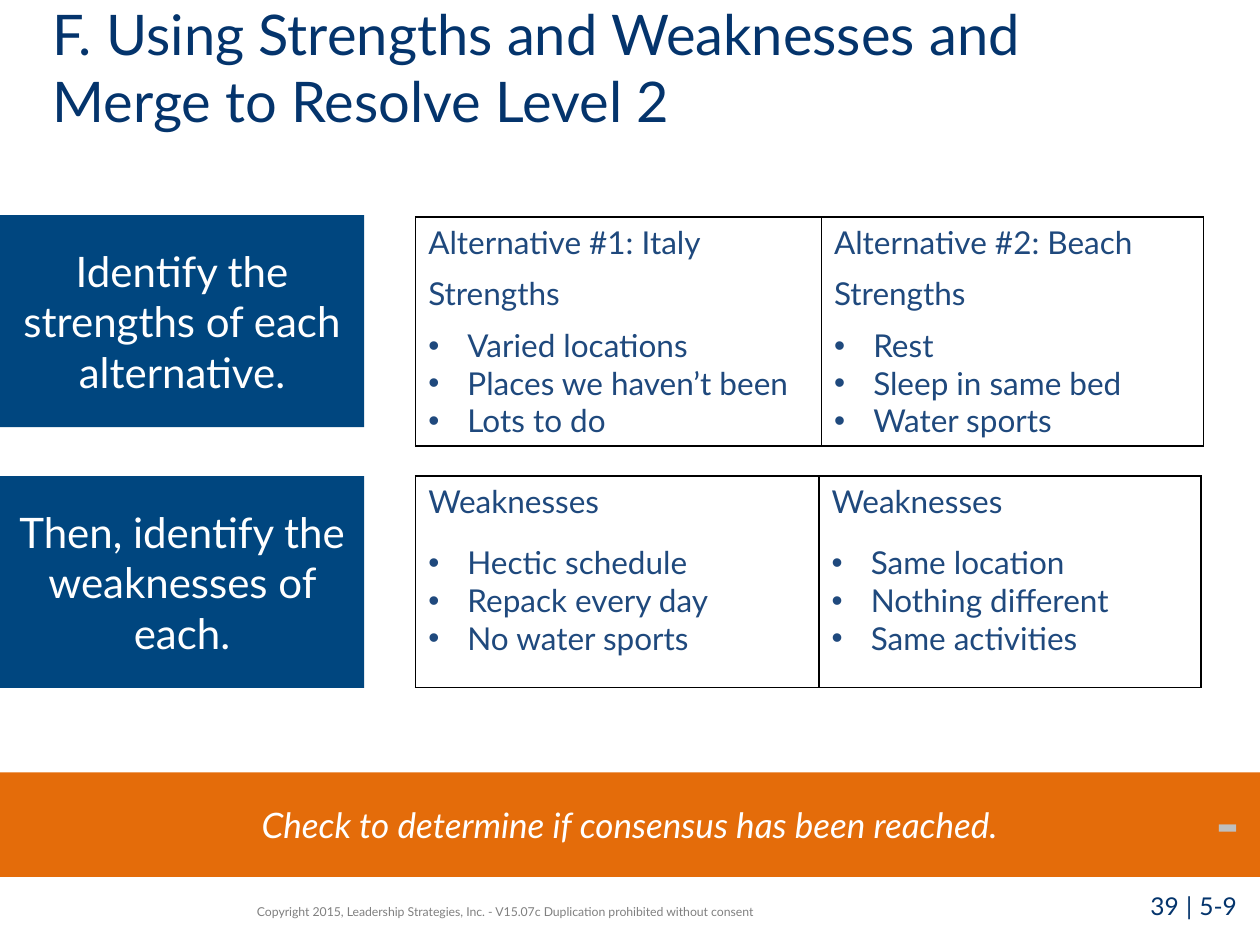
from lxml import etree
from pptx import Presentation
from pptx.dml.color import RGBColor
from pptx.enum.shapes import MSO_SHAPE
from pptx.enum.text import MSO_ANCHOR, PP_ALIGN
from pptx.oxml.ns import qn
from pptx.util import Cm, Pt

RECTANGLE = MSO_SHAPE.RECTANGLE
TOP, MIDDLE = MSO_ANCHOR.TOP, MSO_ANCHOR.MIDDLE
LEFT, CENTER = PP_ALIGN.LEFT, PP_ALIGN.CENTER

NAVY, BLUE, ORANGE = "04346C", "00467F", "E46C0A"
TABLE_TEXT, WHITE, GREY, LIGHT_GREY, BLACK = "1F497D", "FFFFFF", "808080", "BFBFBF", "000000"
BULLET_INDENT = Cm(0.79)
TABLE_LEFT = 8.38
STRENGTHS_TOP, WEAKNESSES_TOP = 4.34, 9.6


def color(hex_value):
    return RGBColor.from_string(hex_value)


class SlideBuilder:
    def __init__(self, slide):
        self.slide = slide
        self.font_name = "Lato"

    def apply_format(self, font, size, hex_value, **values):
        settings = {"name": self.font_name, "size": Pt(size), **values}
        for name, value in settings.items():
            setattr(font, name, value)
        font.color.rgb = color(hex_value)

    def add_runs(self, text_frame, runs, anchor, alignment):
        text_frame.word_wrap = True
        text_frame.vertical_anchor = anchor
        paragraph = text_frame.paragraphs[0]
        paragraph.alignment = alignment
        for text, values in runs:
            run = paragraph.add_run()
            run.text = text
            self.apply_format(run.font, **values)

    def text(self, box, runs, anchor=TOP, alignment=LEFT):
        shape = self.slide.shapes.add_textbox(*map(Cm, box))
        self.add_runs(shape.text_frame, runs, anchor, alignment)

    def block(self, box, fill, text, **values):
        shape = self.slide.shapes.add_shape(RECTANGLE, *map(Cm, box))
        shape.shadow.inherit = False
        shape.fill.solid()
        shape.fill.fore_color.rgb = color(fill)
        shape.line.fill.background()
        self.add_runs(shape.text_frame, [(text, {"hex_value": WHITE, **values})], MIDDLE, CENTER)

    def border(self, cell, visible_sides):
        properties = cell._tc.get_or_add_tcPr()
        for side in "LRTB":
            line = etree.SubElement(properties, qn(f"a:ln{side}"), w=str(Pt(1)))
            if side in visible_sides:
                fill = etree.SubElement(line, qn("a:solidFill"))
                etree.SubElement(fill, qn("a:srgbClr"), val=BLACK)
            else:
                etree.SubElement(line, qn("a:noFill"))

    def bullet(self, paragraph):
        properties = paragraph._p.get_or_add_pPr()
        properties.set("marL", str(BULLET_INDENT))
        properties.set("indent", str(-BULLET_INDENT))
        etree.SubElement(properties, qn("a:buFont"), typeface="Arial")
        etree.SubElement(properties, qn("a:buChar"), char="•")

    def fill_cell(self, cell, content):
        bulleted = isinstance(content, list)
        lines = content if bulleted else [content]
        for index, line in enumerate(lines):
            text_frame = cell.text_frame
            paragraph = text_frame.add_paragraph() if index else text_frame.paragraphs[0]
            if bulleted:
                self.bullet(paragraph)
            run = paragraph.add_run()
            run.text = line
            self.apply_format(run.font, 18, TABLE_TEXT)

    def table(self, top, widths, heights, rows):
        box = (TABLE_LEFT, top, sum(widths), sum(heights))
        table = self.slide.shapes.add_table(len(rows), len(widths), *map(Cm, box)).table
        table.first_row = table.horz_banding = False
        for column, width in zip(table.columns, widths):
            column.width = Cm(width)
        for index, (row, height, contents) in enumerate(zip(table.rows, heights, rows)):
            row.height = Cm(height)
            sides = "LR" + "T" * (index == 0) + "B" * (index == len(rows) - 1)
            for cell, content in zip(row.cells, contents):
                self.border(cell, sides)
                cell.fill.background()
                self.fill_cell(cell, content)


def main():
    presentation = Presentation()
    presentation.slide_width, presentation.slide_height = Cm(25.4), Cm(19.05)
    builder = SlideBuilder(presentation.slides.add_slide(presentation.slide_layouts[6]))

    builder.text(
        (0.81, 0, 22.23, 2.69),
        [("F. Using Strengths and Weaknesses and Merge to Resolve Level 2",
          {"size": 32, "hex_value": NAVY})],
        MIDDLE,
    )
    builder.table(4.37, (8.18, 7.7), (1.04, 1.04, 2.52), [
        ("Alternative #1: Italy", "Alternative #2: Beach"),
        ("Strengths", "Strengths"),
        (["Varied locations", "Places we haven’t been", "Lots to do"],
         ["Rest", "Sleep in same bed", "Water sports"]),
    ])
    builder.text(
        (4.93, 17.98, 11.79, 0.79),
        [("Copyright 2015, Leadership Strategies, Inc. - V15.07c "
          "Duplication prohibited without consent", {"size": 7, "hex_value": GREY})],
        MIDDLE,
    )
    builder.table(WEAKNESSES_TOP, (8.13, 7.7), (1.23, 3.03), [
        ("Weaknesses", "Weaknesses"),
        (["Hectic schedule", "Repack every day", "No water sports"],
         ["Same location", "Nothing different", "Same activities"]),
    ])
    builder.block((0, 15.57, 25.4, 2.11), ORANGE,
                  "Check to determine if consensus has been reached.", size=20, italic=True)
    for top, text in (
        (STRENGTHS_TOP, "Identify the strengths of each alternative."),
        (WEAKNESSES_TOP, "Then, identify the weaknesses of each."),
    ):
        builder.block((0, top, 7.34, 4.27), BLUE, text, size=24)
    builder.text((24.28, 15.57, 1.85, 1.96),
                 [("-", {"size": 40, "hex_value": LIGHT_GREY, "name": "Calibri", "bold": True})])

    number = {"size": 14, "hex_value": NAVY}
    space = (" ", {"size": 18, "hex_value": BLACK, "name": "Calibri"})
    builder.text((22.73, 17.7, 2.67, 1.35),
                 [("39", number), space, ("|", number), space, ("5-9", number)],
                 alignment=CENTER)

    presentation.save("out.pptx")


if __name__ == "__main__":
    main()
